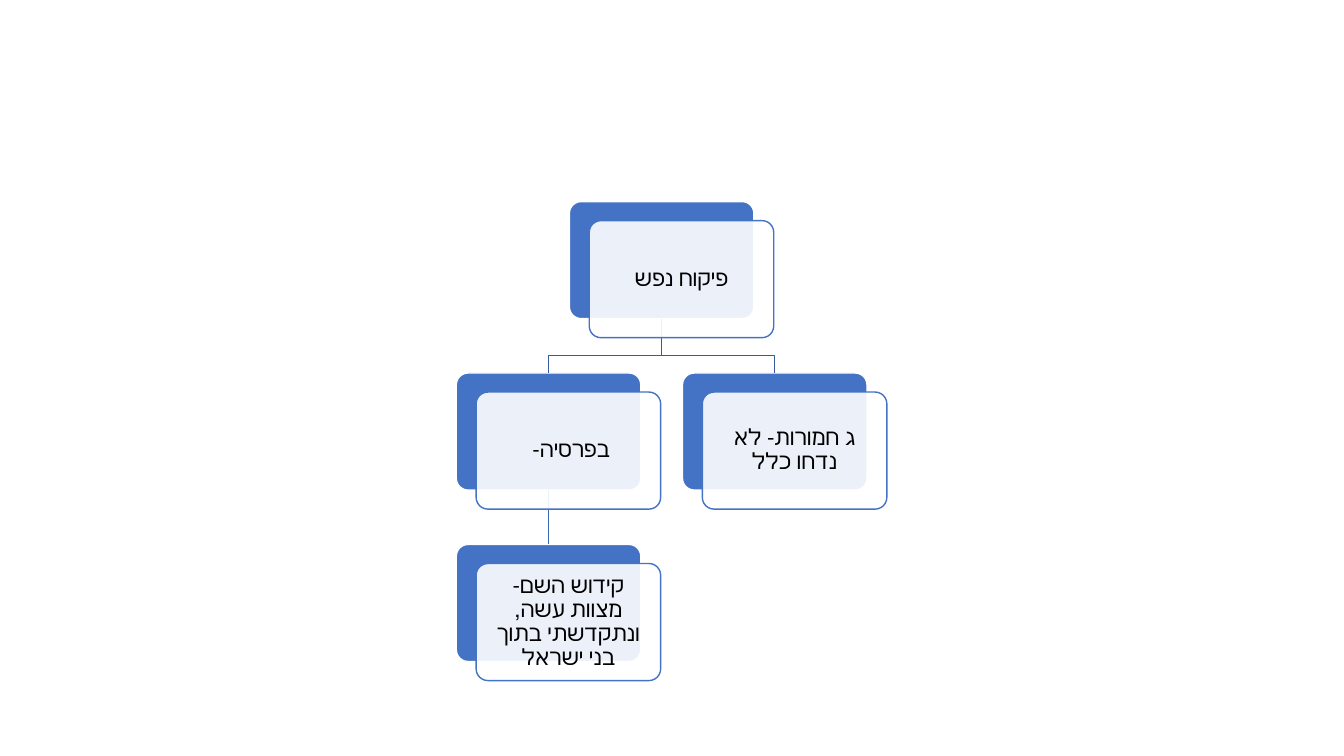
from dataclasses import dataclass

from lxml.etree import SubElement
from pptx import Presentation
from pptx.dml.color import RGBColor as Rgb
from pptx.enum.shapes import MSO_CONNECTOR as Line, MSO_SHAPE as Shape
from pptx.enum.text import MSO_ANCHOR as Anchor, PP_ALIGN as Align
from pptx.oxml.ns import qn
from pptx.util import Cm, Pt


@dataclass(frozen=True)
class Theme:
    blue: Rgb = Rgb(0x44, 0x72, 0xC4)
    white: Rgb = Rgb(0xFF, 0xFF, 0xFF)
    black: Rgb = Rgb(0, 0, 0)
    upper: Rgb = Rgb(0x36, 0x5B, 0x9D)
    lower: Rgb = Rgb(0x3E, 0x67, 0xB2)
    font: str = "Calibri"
    size: Pt = Pt(16)
    rule: Pt = Pt(1)


THEME = Theme()
CARD_W, CARD_H = Cm(4.65), Cm(2.95)
SHIFT_X, SHIFT_Y = Cm(0.5), Cm(0.48)
STEP_X, STEP_Y = Cm(2.85), Cm(4.32)
BEND = Cm(0.93)

# name: (text, column, row, parent)
NODES = {
    "root": ("פיקוח נפש", 1, 0, None),
    "grave": ("ג חמורות- לא נדחו כלל", 2, 1, "root"),
    "public": ("בפרסיה- ", 0, 1, "root"),
    "holy": ("קידוש השם- מצוות עשה, ונתקדשתי בתוך בני ישראל", 0, 2, "public"),
}


def add_card(slide, left, top, fill, edge):
    card = slide.shapes.add_shape(
        Shape.ROUNDED_RECTANGLE, left, top, CARD_W, CARD_H)
    card.adjustments[0] = 0.1
    card.shadow.inherit = False
    card.fill.solid()
    card.fill.fore_color.rgb = fill
    card.line.color.rgb = edge
    card.line.width = THEME.rule
    return card


def add_front(slide, back, text):
    """Lay the translucent text card over its blue back card."""
    card = add_card(slide, back.left + SHIFT_X, back.top + SHIFT_Y,
                    THEME.white, THEME.blue)
    color = card.fill._xPr.find(qn("a:solidFill"))[0]
    SubElement(color, qn("a:alpha"), val="90000")

    frame = card.text_frame
    frame.word_wrap = True
    frame.vertical_anchor = Anchor.MIDDLE
    frame.margin_left = frame.margin_right = Cm(0.18)
    frame.margin_top = frame.margin_bottom = Cm(0.18)
    para = frame.paragraphs[0]
    para.text = text
    para.alignment = Align.CENTER
    para.line_spacing = 0.9
    para.space_after = Pt(5.6)
    para._p.get_or_add_pPr().set("rtl", "1")
    para.font.name = THEME.font
    para.font.size = THEME.size
    para.font.color.rgb = THEME.black


def add_link(slide, parent, child):
    """Join two cards, with a bend where they stand in different columns."""
    start = parent.left + CARD_W // 2, parent.top + CARD_H
    end = child.left + CARD_W // 2, child.top
    if start[0] == end[0]:
        link = slide.shapes.add_connector(Line.STRAIGHT, *start, *end)
        link.begin_connect(parent, 2)
        link.end_connect(child, 0)
        SubElement(link._element.spPr, qn("a:effectLst"))
        color = THEME.lower
    else:
        turn = start[1] + BEND
        path = slide.shapes.build_freeform(*start)
        path.add_line_segments(
            [(start[0], turn), (end[0], turn), end], close=False)
        link = path.convert_to_shape()
        link.fill.background()
        link.shadow.inherit = False
        color = THEME.upper
    link.line.color.rgb = color
    link.line.width = THEME.rule


def add_tree(slide, left, top):
    backs = {
        name: add_card(slide, left + col * STEP_X, top + row * STEP_Y,
                       THEME.blue, THEME.white)
        for name, (_, col, row, _) in NODES.items()
    }
    for name, (_, _, _, parent) in NODES.items():
        if parent:
            add_link(slide, backs[parent], backs[name])
    for name, (text, *_) in NODES.items():
        add_front(slide, backs[name], text)


def main():
    deck = Presentation()
    deck.slide_width, deck.slide_height = Cm(33.87), Cm(19.05)
    slide = deck.slides.add_slide(deck.slide_layouts[6])
    add_tree(slide, Cm(11.5), Cm(5.08))
    deck.save("out.pptx")


if __name__ == "__main__":
    main()
